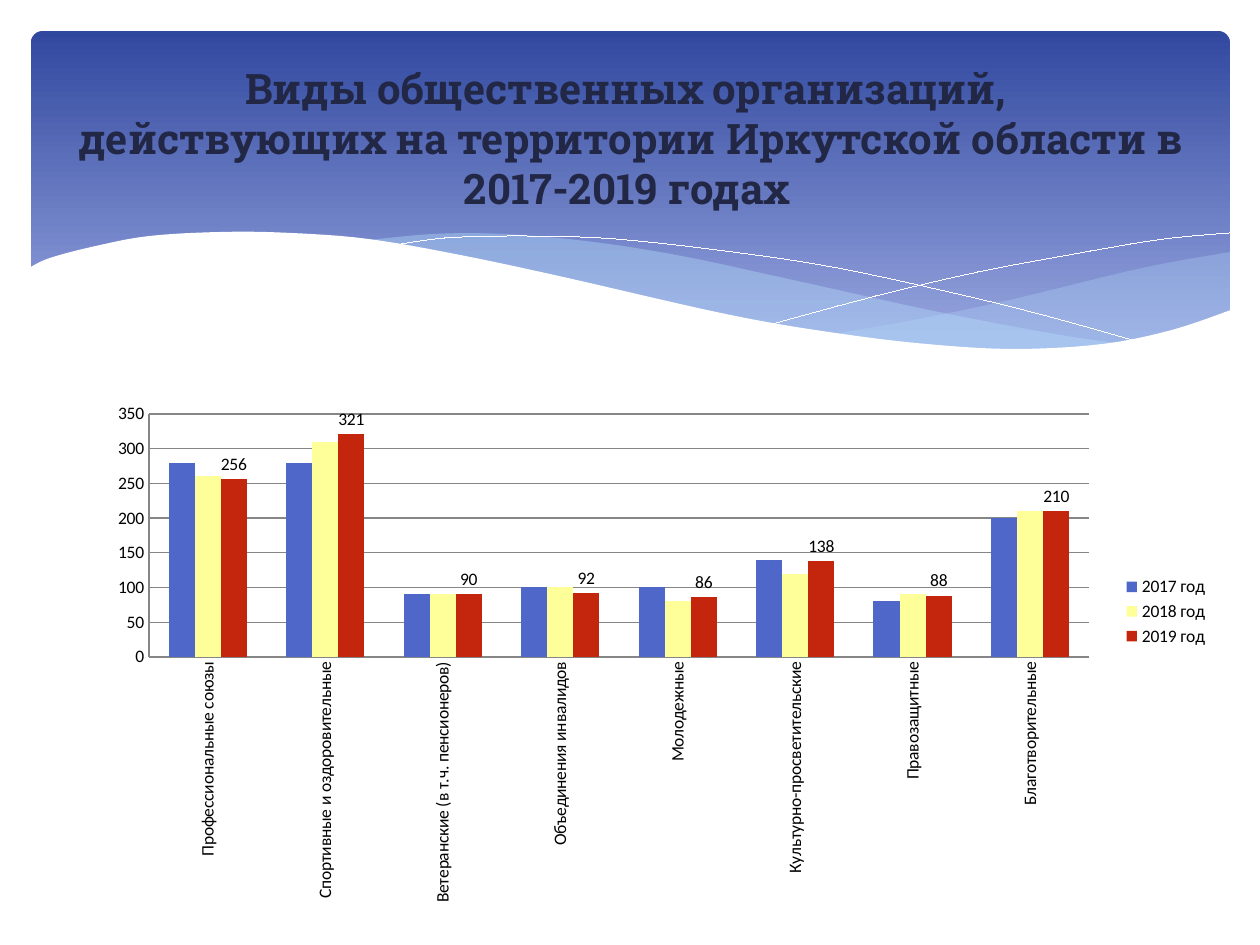
"""Build a slide on the kinds of public organisations in Irkutsk Oblast, 2017-2019."""
from lxml import etree
from pptx import Presentation
from pptx.chart.data import CategoryChartData
from pptx.dml.color import RGBColor
from pptx.enum.chart import XL_CHART_TYPE as ChartType, XL_LABEL_POSITION as LabelPos
from pptx.enum.chart import XL_LEGEND_POSITION as LegendPos, XL_TICK_MARK as Tick
from pptx.enum.shapes import MSO_SHAPE as Preset
from pptx.enum.text import MSO_ANCHOR as Anchor, PP_ALIGN as Align
from pptx.oxml.ns import qn
from pptx.util import Pt

PX = 914400 / 126
WHITE, BLACK = RGBColor(255, 255, 255), RGBColor(0, 0, 0)
NAVY, DEEP_BLUE = RGBColor(0x21, 0x27, 0x45), RGBColor(0x31, 0x48, 0x9F)
LAVENDER, SKY = RGBColor(0x95, 0xA4, 0xDE), RGBColor(0xB4, 0xDC, 0xFA)
BLUE, YELLOW, RED = RGBColor(0x4E, 0x67, 0xC8), RGBColor(255, 255, 0x99), RGBColor(0xC3, 0x26, 0x0C)
GREY = RGBColor(0x86, 0x86, 0x86)

HEADING = ["Виды общественных организаций, ",
           "действующих на территории Иркутской области в 2017-2019 годах "]
KINDS = ["Профессиональные союзы", "Спортивные и оздоровительные",
         "Ветеранские (в т.ч. пенсионеров)", "Объединения инвалидов", "Молодежные",
         "Культурно-просветительские", "Правозащитные", "Благотворительные"]
YEARS = [("2017 год ", BLUE, (280, 280, 90, 100, 100, 140, 80, 200)),
         ("2018 год ", YELLOW, (260, 310, 90, 100, 80, 120, 90, 210)),
         ("2019 год ", RED, (256, 321, 90, 92, 86, 138, 88, 210))]
PLOT = {"x": 0.074, "y": 0.179, "w": 0.809, "h": 0.395}

RIGHT_BAND = [[(1230, 252), (1142, 268), (1014, 299), (919, 319), (833, 334)],
              [(833, 334), (906, 343), (984, 349), (1052, 349), (1120, 343), (1178, 330), (1230, 311)]]
LEFT_BAND = [[(1125, 344), (1055, 334), (934, 311), (793, 280), (682, 256), (586, 241),
              (503, 234), (433, 234), (360, 241)],
             [(360, 241), (456, 256), (566, 280), (713, 312), (838, 335), (959, 349),
              (1043, 350), (1125, 344)]]
FALLING_LINE = [[(389, 246), (445, 238), (524, 236), (616, 239), (733, 252), (838, 268),
                 (958, 294), (1047, 316), (1143, 343)]]
RISING_LINE = [[(772, 324), (876, 296), (978, 272), (1091, 251), (1164, 239), (1229, 233)]]
WHITE_WAVE = [[(1231, 310), (1172, 330), (1103, 344), (1019, 349), (937, 345), (842, 334),
               (730, 315), (563, 277), (460, 255), (368, 239), (290, 233), (223, 232),
               (150, 236), (96, 246), (50, 258), (29, 268)],
              [(29, 415), (1231, 415)]]
WAVES = [(RIGHT_BAND, SKY, 29, True), (LEFT_BAND, SKY, 40, True), (FALLING_LINE, WHITE, 100, False),
         (RISING_LINE, WHITE, 100, False), (WHITE_WAVE, WHITE, 100, True)]


def px(*lengths):
    return [round(length * PX) for length in lengths]


def smooth(knots, steps=6):
    """Return points of a Catmull-Rom curve through the knots."""
    padded = [knots[0], *knots, knots[-1]]
    points = [knots[0]]
    for a, b, c, d in zip(padded, padded[1:], padded[2:], padded[3:]):
        for step in range(1, steps + 1):
            t = step / steps
            points.append(tuple(
                (2 * q + (r - p) * t + (2 * p - 5 * q + 4 * r - s) * t ** 2
                 + (3 * q - p - 3 * r + s) * t ** 3) / 2
                for p, q, r, s in zip(a, b, c, d)))
    return points


def add_banner(slide):
    banner = slide.shapes.add_shape(Preset.ROUNDED_RECTANGLE, *px(31, 31, 1199, 340))
    banner.adjustments[0] = 0.034
    banner.shadow.inherit = False
    banner.line.fill.background()
    banner.fill.gradient()
    banner.fill.gradient_angle = 270
    for stop, color, position in zip(banner.fill.gradient_stops, (DEEP_BLUE, LAVENDER), (0, 0.9)):
        stop.color.rgb = color
        stop.position = position


def add_wave(slide, curves, color, opacity, closed):
    start, *rest = [px(*point) for curve in curves for point in smooth(curve)]
    builder = slide.shapes.build_freeform(*start)
    builder.add_line_segments(rest, close=closed)
    wave = builder.convert_to_shape()
    wave.shadow.inherit = False
    if not closed:
        wave.fill.background()
        wave.line.color.rgb = color
        wave.line.width = Pt(0.01)
        return
    wave.line.fill.background()
    wave.fill.solid()
    wave.fill.fore_color.rgb = color
    if opacity < 100:
        tint = wave.fill._xPr.find(".//" + qn("a:srgbClr"))
        etree.SubElement(tint, qn("a:alpha")).set("val", str(opacity * 1000))


def add_heading(slide):
    frame = slide.shapes.add_textbox(*px(64, 66, 1134, 193)).text_frame
    frame.word_wrap = True
    frame.vertical_anchor = Anchor.MIDDLE
    frame.margin_bottom, = px(56)
    paragraph = frame.paragraphs[0]
    paragraph.alignment = Align.CENTER
    for index, line in enumerate(HEADING):
        if index:
            paragraph.add_line_break()
        run = paragraph.add_run()
        run.text = line
        run.font.name, run.font.size, run.font.bold = "Roboto Slab", Pt(24), True
        run.font.color.rgb = NAVY


def add_organisation_chart(slide):
    data = CategoryChartData()
    data.categories = KINDS
    for year, _, counts in YEARS:
        data.add_series(year, counts)
    chart = slide.shapes.add_chart(ChartType.COLUMN_CLUSTERED, *px(63, 304, 1162, 615), data).chart
    chart.has_title = False
    chart.font.name, chart.font.size = "Calibri", Pt(10)
    chart.font.color.rgb = BLACK
    chart.has_legend = True
    chart.legend.position = LegendPos.RIGHT
    chart.legend.include_in_layout = False

    kinds, counts = chart.category_axis, chart.value_axis
    counts.minimum_scale, counts.maximum_scale, counts.major_unit = 0, 350, 50
    counts.has_major_gridlines = True
    for axis in (kinds, counts):
        axis.major_tick_mark = axis.minor_tick_mark = Tick.NONE
        axis.tick_labels.font.size = Pt(10)
    for line in (kinds.format.line, counts.format.line, counts.major_gridlines.format.line):
        line.color.rgb = GREY
        line.width = Pt(0.7)
    kinds._element.find(qn("c:txPr")).find(qn("a:bodyPr")).set("rot", "-5400000")

    plot = chart.plots[0]
    plot.gap_width, plot.overlap, plot.vary_by_categories = 150, 0, False
    for series, (_, color, _) in zip(plot.series, YEARS):
        series.format.fill.solid()
        series.format.fill.fore_color.rgb = color
    labels = plot.series[-1].data_labels
    labels.show_value = True
    labels.position = LabelPos.OUTSIDE_END

    area = chart._chartSpace.find(".//" + qn("c:plotArea"))
    for old in area.findall(qn("c:layout")):
        area.remove(old)
    layout = etree.Element(qn("c:layout"))
    area.insert(0, layout)
    manual = etree.SubElement(layout, qn("c:manualLayout"))
    settings = {"layoutTarget": "inner", "xMode": "edge", "yMode": "edge", **PLOT}
    for tag, value in settings.items():
        etree.SubElement(manual, qn("c:" + tag)).set("val", str(value))


def main():
    deck = Presentation()
    deck.slide_width, deck.slide_height = px(1260, 945)
    slide = deck.slides.add_slide(deck.slide_layouts[6])
    add_banner(slide)
    for wave in WAVES:
        add_wave(slide, *wave)
    add_heading(slide)
    add_organisation_chart(slide)
    deck.save("out.pptx")


if __name__ == "__main__":
    main()
